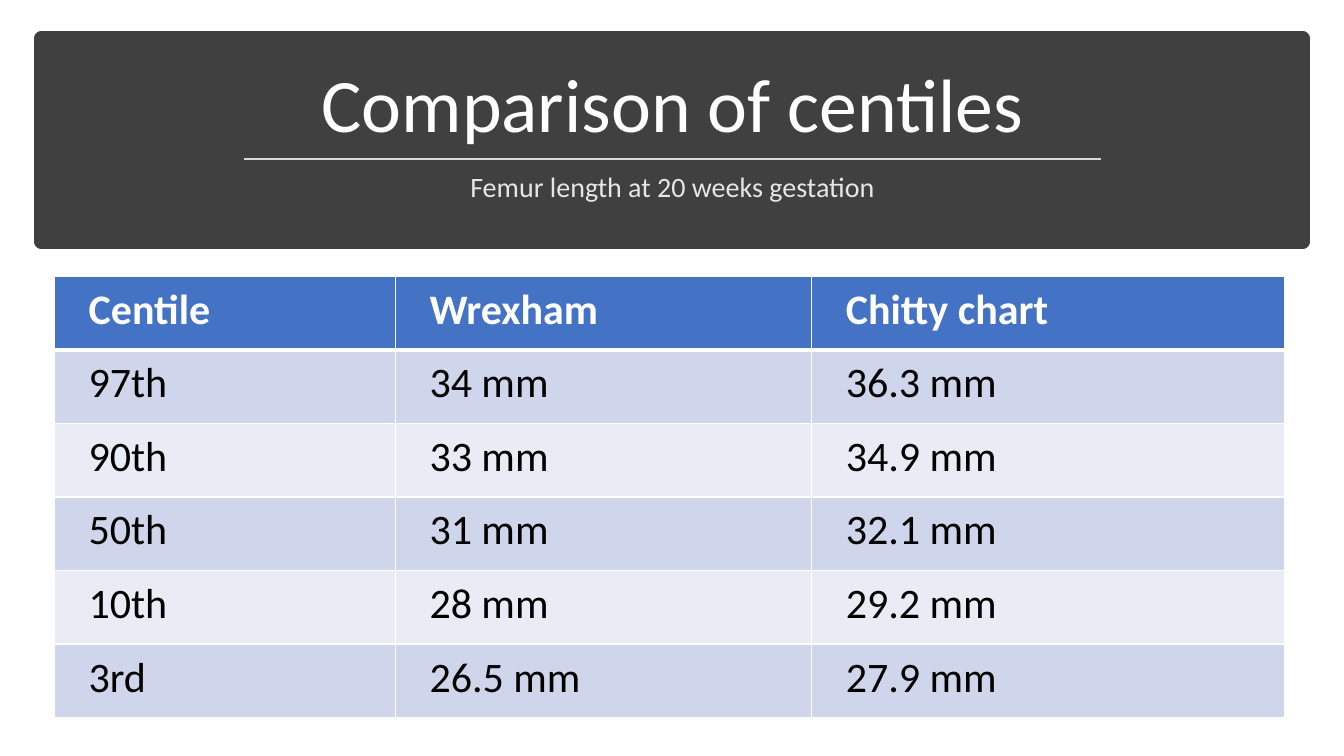
from dataclasses import dataclass

from lxml.etree import SubElement
from pptx import Presentation
from pptx.dml.color import RGBColor
from pptx.enum.shapes import MSO_CONNECTOR, MSO_SHAPE
from pptx.enum.text import MSO_ANCHOR, MSO_AUTO_SIZE, PP_ALIGN
from pptx.oxml.ns import qn
from pptx.util import Inches, Pt

TITLE = "Comparison of centiles"
SUBTITLE = "Femur length at 20 weeks gestation"
ROWS = [
    ("Centile", "Wrexham", "Chitty chart"),
    ("97th", "34 mm", "36.3 mm"),
    ("90th", "33 mm", "34.9 mm"),
    ("50th", "31 mm", "32.1 mm"),
    ("10th", "28 mm", "29.2 mm"),
    ("3rd", "26.5 mm", "27.9 mm"),
]
COLUMN_WIDTHS = (3.38, 4.13, 4.69)
ROW_HEIGHT = 0.73


@dataclass(frozen=True)
class Theme:
    font: str = "Calibri"
    white: str = "FFFFFF"
    black: str = "000000"
    band: str = "404040"
    rule: str = "D9D9D9"
    subtitle: str = "E7E6E6"
    header: str = "4472C4"
    stripes: tuple = ("E9EBF5", "CFD5EA")
    title_size: int = 54
    subtitle_size: int = 20
    table_size: int = 30


THEME = Theme()


def color(value):
    return RGBColor.from_string(value)


def style_font(para, size, value, bold=False):
    para.font.name = THEME.font
    para.font.size = Pt(size)
    para.font.color.rgb = color(value)
    para.font.bold = bold


def place(shape, left, top, width, height):
    shape.left, shape.top = Inches(left), Inches(top)
    shape.width, shape.height = Inches(width), Inches(height)


def set_heading(box, text, size, value, anchor):
    frame = box.text_frame
    frame.text = text
    frame.word_wrap = True
    frame.auto_size = MSO_AUTO_SIZE.NONE
    frame.vertical_anchor = anchor
    para = frame.paragraphs[0]
    para.alignment = PP_ALIGN.CENTER
    para.line_spacing = 0.9
    style_font(para, size, value)
    return para


def add_heading(page):
    band = page.shapes.add_shape(
        MSO_SHAPE.RECTANGLE, Inches(0.41), Inches(0.38), Inches(12.51), Inches(2.02)
    )
    band.shadow.inherit = False
    band.fill.solid()
    band.fill.fore_color.rgb = color(THEME.band)
    band.line.color.rgb = color(THEME.band)
    band.line.width = Pt(10)
    title = page.shapes.title
    title._element.addprevious(band._element)
    place(title, 0.58, 0.51, 12.18, 1.02)
    set_heading(title, TITLE, THEME.title_size, THEME.white, MSO_ANCHOR.BOTTOM)

    subtitle = page.shapes.add_textbox(
        Inches(1.67), Inches(1.67), Inches(10), Inches(0.46)
    )
    para = set_heading(
        subtitle, SUBTITLE, THEME.subtitle_size, THEME.subtitle, MSO_ANCHOR.TOP
    )
    para.space_before = Pt(10)

    rule = page.shapes.add_connector(
        MSO_CONNECTOR.STRAIGHT, Inches(2.42), Inches(1.58), Inches(10.92), Inches(1.58)
    )
    rule.line.color.rgb = color(THEME.rule)
    rule.line.width = Pt(1.75)
    SubElement(rule._element.spPr, qn("a:effectLst"))


def set_borders(cell, bottom_width, top_width):
    properties = cell._tc.get_or_add_tcPr()
    widths = {"a:lnL": 1, "a:lnR": 1, "a:lnT": top_width, "a:lnB": bottom_width}
    for index, (tag, width) in enumerate(widths.items()):
        border = SubElement(properties, qn(tag), w=str(Pt(width)))
        fill = SubElement(border, qn("a:solidFill"))
        SubElement(fill, qn("a:srgbClr"), val=THEME.white)
        properties.insert(index, border)


def add_centile_table(page):
    table = page.shapes.add_table(
        len(ROWS), len(COLUMN_WIDTHS), Inches(0.54), Inches(2.74),
        Inches(sum(COLUMN_WIDTHS)), Inches(ROW_HEIGHT * len(ROWS)),
    ).table
    for column, width in zip(table.columns, COLUMN_WIDTHS):
        column.width = Inches(width)
    for row_index, values in enumerate(ROWS):
        is_header = row_index == 0
        table.rows[row_index].height = Inches(ROW_HEIGHT)
        for column_index, value in enumerate(values):
            cell = table.cell(row_index, column_index)
            cell.text = value
            cell.margin_left = cell.margin_right = Inches(0.34)
            cell.margin_top = cell.margin_bottom = Inches(0.08)
            cell.fill.solid()
            cell.fill.fore_color.rgb = color(
                THEME.header if is_header else THEME.stripes[row_index % 2]
            )
            set_borders(cell, 3 if is_header else 1, 3 if row_index == 1 else 1)
            style_font(
                cell.text_frame.paragraphs[0], THEME.table_size,
                THEME.white if is_header else THEME.black, is_header,
            )


def main():
    deck = Presentation()
    deck.slide_width, deck.slide_height = Inches(13.33), Inches(7.5)
    page = deck.slides.add_slide(deck.slide_layouts.get_by_name("Title Only"))
    add_heading(page)
    add_centile_table(page)
    deck.save("out.pptx")


if __name__ == "__main__":
    main()
